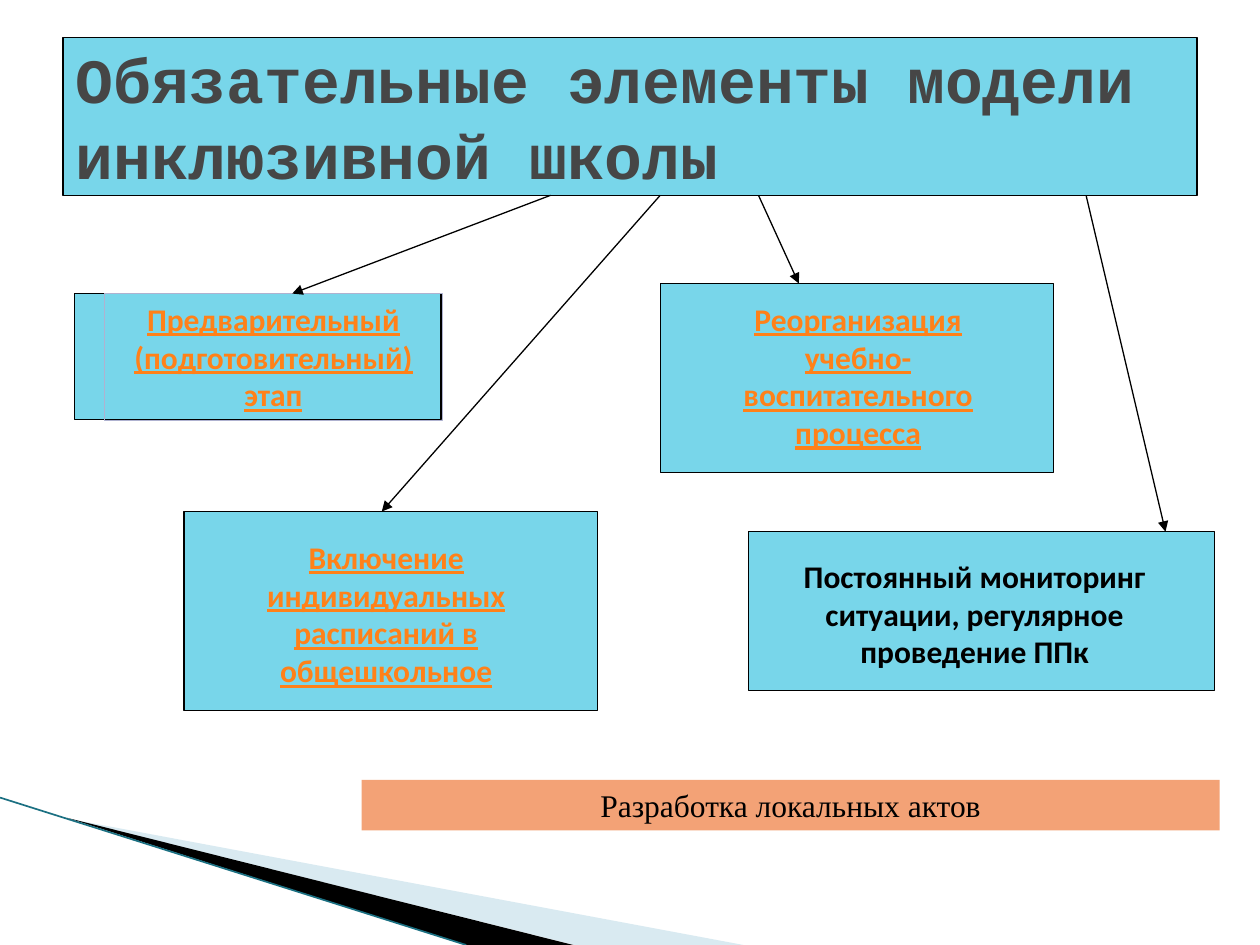
from dataclasses import dataclass

from lxml import etree
from pptx import Presentation
from pptx.dml.color import RGBColor as RGB
from pptx.enum.shapes import MSO_CONNECTOR as CONN, MSO_SHAPE as SHAPE
from pptx.enum.text import MSO_ANCHOR as ANCHOR, PP_ALIGN as ALIGN
from pptx.oxml.ns import qn
from pptx.util import Inches, Pt


@dataclass(frozen=True)
class Theme:
    box: str = "78D6EA"
    black: str = "000000"
    title: str = "464646"
    accent: str = "FF8119"
    frame: str = "AFB2D0"
    banner: str = "F3A276"
    wedge: str = "D9EAF1"
    edge: str = "1B7082"
    title_font: str = "Courier New"
    body_font: str = "Calibri"
    banner_font: str = "Times New Roman"
    title_size: int = 36
    body_size: int = 18
    line: float = 0.75


class SlideBuilder:
    def __init__(self, slide, theme):
        self.s = slide
        self.t = theme

    def paint(self, sp, fill=None, line=None):
        if fill:
            sp.fill.solid()
            sp.fill.fore_color.rgb = RGB.from_string(fill)
        else:
            sp.fill.background()
        if line:
            sp.line.color.rgb = RGB.from_string(line)
            sp.line.width = Pt(self.t.line)
        else:
            sp.line.fill.background()

    def set_text(self, sp, text, font, size, color, align, bold=True, underline=False):
        tf = sp.text_frame
        tf.word_wrap = True
        tf.text = text
        p = tf.paragraphs[0]
        p.alignment = align
        f = p.runs[0].font
        f.name, f.size, f.bold = font, Pt(size), bold
        f.underline = underline or None
        f.color.rgb = RGB.from_string(color)

    def title(self, text, *at):
        sp = self.s.shapes.title
        sp.left, sp.top, sp.width, sp.height = map(Inches, at)
        self.paint(sp, self.t.box, self.t.black)
        self.set_text(sp, text, self.t.title_font, self.t.title_size, self.t.title, ALIGN.LEFT)
        sp.text_frame.vertical_anchor = ANCHOR.MIDDLE

    def box(self, at, fill=None, line=None):
        sp = self.s.shapes.add_shape(SHAPE.RECTANGLE, *map(Inches, at))
        sp.shadow.inherit = False
        self.paint(sp, fill, line)
        return sp

    def label(self, text, at, fill=None, line=None, color=None, font=None, **style):
        sp = self.box(at, fill, line)
        sp.text_frame.vertical_anchor = ANCHOR.TOP
        self.set_text(sp, text, font or self.t.body_font, self.t.body_size,
                      color or self.t.black, ALIGN.CENTER, **style)

    def wedge(self, points, fill):
        pts = [(Inches(x), Inches(y)) for x, y in points]
        fb = self.s.shapes.build_freeform(*pts[0])
        fb.add_line_segments(pts[1:], close=True)
        sp = fb.convert_to_shape()
        sp.shadow.inherit = False
        self.paint(sp, fill)

    def connector(self, start, end, color, width, arrow=False):
        c = self.s.shapes.add_connector(CONN.STRAIGHT, *map(Inches, (*start, *end)))
        c.line.color.rgb = RGB.from_string(color)
        c.line.width = Pt(width)
        props = c._element.spPr
        if arrow:
            etree.SubElement(props.find(qn("a:ln")), qn("a:tailEnd"), type="triangle")
        etree.SubElement(props, qn("a:effectLst"))


def main():
    prs = Presentation()
    prs.slide_width, prs.slide_height = Inches(10), Inches(7.5)
    t = Theme()
    b = SlideBuilder(prs.slides.add_slide(prs.slide_layouts[5]), t)

    # Corner decoration
    b.wedge([(0.55, 6.5), (5.9, 7.5), (4.56, 7.5)], t.wedge)
    b.wedge([(0.53, 6.49), (4.55, 7.5), (3.7, 7.5)], t.black)
    b.connector((0, 6.33), (3.7, 7.5), t.edge, 0.95)

    # Title
    b.title("Обязательные элементы модели инклюзивной школы", 0.5, 0.3, 9, 1.25)

    # Element frames
    for at in [(0.59, 2.33, 2.91, 1), (1.46, 4.06, 3.28, 1.58),
               (5.24, 2.25, 3.12, 1.5), (5.94, 4.22, 3.7, 1.26)]:
        b.box(at, t.box, t.black)

    # Element labels
    link = dict(color=t.accent, underline=True)
    b.label("Предварительный (подготовительный) этап",
            (0.83, 2.33, 2.68, 1.01), line=t.frame, **link)
    b.label("Включение индивидуальных расписаний в общешкольное",
            (1.53, 4.22, 3.07, 1.3), t.box, **link)
    b.label("Реорганизация учебно-воспитательного процесса",
            (5.55, 2.33, 2.52, 1.3), t.box, **link)
    b.label("Постоянный мониторинг ситуации, регулярное проведение ППк",
            (6.04, 4.37, 3.39, 1.01), t.box)

    # Arrows from the title to the elements
    for x, end in [(4.37, (2.32, 2.33)), (5.24, (3.03, 4.06)),
                   (6.02, (6.34, 2.25)), (8.62, (9.25, 4.22))]:
        b.connector((x, 1.55), end, t.black, t.line, arrow=True)

    # Bottom banner
    b.label("Разработка локальных актов", (2.87, 6.19, 6.81, 0.4), t.banner,
            font=t.banner_font, bold=False)

    prs.save("out.pptx")


if __name__ == "__main__":
    main()
